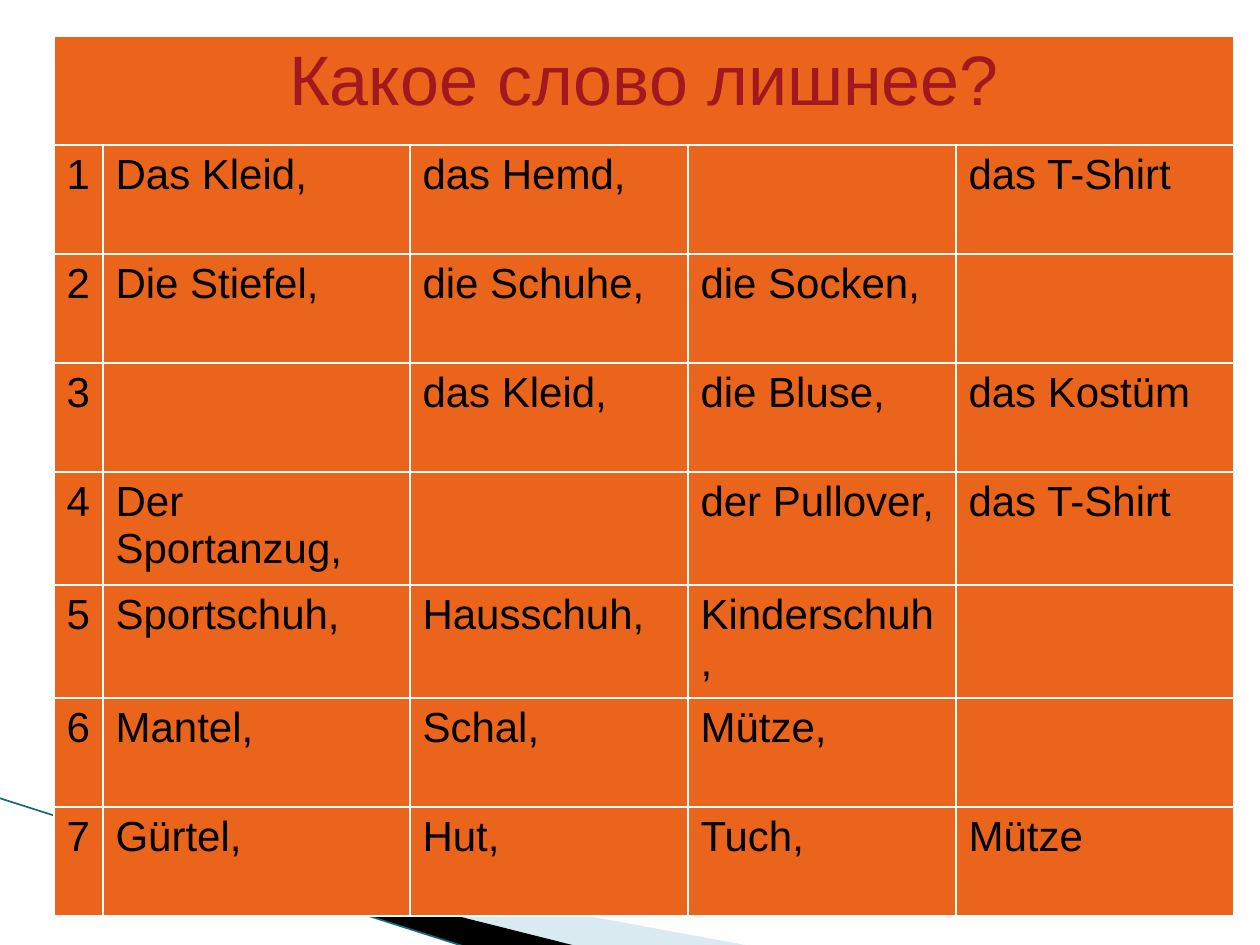
from pptx import Presentation
from pptx.dml.color import RGBColor as RGB
from pptx.enum.text import PP_ALIGN as Align
from pptx.oxml.ns import qn
from pptx.util import Pt
from lxml.etree import SubElement as Sub

SCALE = 914400 / 126
BLACK = RGB(0, 0, 0)
ORANGE = RGB(0xEB, 0x64, 0x1B)
RED = RGB(0xA3, 0x17, 0x1E)
PALE = RGB(0xA0, 0xCB, 0xDC)
TEAL = RGB(0x16, 0x69, 0x7A)

TITLE = "Какое слово лишнее?"
WORDS = [
    ("Das Kleid,", "das Hemd,", "", "das T-Shirt"),
    ("Die Stiefel,", "die Schuhe,", "die Socken,", ""),
    ("", "das Kleid,", "die Bluse,", "das Kostüm"),
    ("Der Sportanzug,", "", "der Pullover,", "das T-Shirt"),
    ("Sportschuh,", "Hausschuh,", "Kinderschuh,", ""),
    ("Mantel,", "Schal,", "Mütze,", ""),
    ("Gürtel,", "Hut,", "Tuch,", "Mütze"),
]
COLS = (49, 307, 278, 268, 278)
ROWS = (109, 109, 109, 109, 113, 113, 109, 109)


def px(n):
    return round(n * SCALE)


def set_frame(shape, points, left, top, width, height):
    """Give a freeform a frame that its outline may reach beyond."""
    shape.left, shape.top = px(left), px(top)
    shape.width, shape.height = px(width), px(height)
    outline = next(shape._element.iter(qn("a:path")))
    outline.set("w", str(width))
    outline.set("h", str(height))
    for node, (x, y) in zip(outline.iter(qn("a:pt")), points):
        node.set("x", str(x - left))
        node.set("y", str(y - top))


def add_wedge(slide, points, frame, color, alpha=100):
    start, *rest = points
    pen = slide.shapes.build_freeform(*start, scale=SCALE)
    pen.add_line_segments(rest, close=False)
    wedge = pen.convert_to_shape()
    set_frame(wedge, points, *frame)
    wedge.shadow.inherit = False
    wedge.line.fill.background()
    wedge.fill.solid()
    wedge.fill.fore_color.rgb = color
    if alpha < 100:
        tint = wedge._element.spPr.find(qn("a:solidFill"))[0]
        Sub(tint, qn("a:alpha"), val=str(alpha * 1000))


def add_line(slide, x1, y1, x2, y2, color, width):
    line = slide.shapes.add_connector(1, px(x1), px(y1), px(x2), px(y2))
    line.line.color.rgb = color
    line.line.width = Pt(width)
    Sub(line._element.spPr, qn("a:effectLst"))


def fill_cell(cell, text, size=24, color=BLACK, align=Align.LEFT):
    cell.fill.solid()
    cell.fill.fore_color.rgb = ORANGE
    cell.text = text
    para = cell.text_frame.paragraphs[0]
    para.alignment = align
    font = para.font
    font.name = "Arial"
    font.size = Pt(size)
    font.bold = False
    font.color.rgb = color


def add_words(slide, left, top):
    # The default table style draws the white rules
    table = slide.shapes.add_table(
        len(ROWS), len(COLS), px(left), px(top),
        px(sum(COLS)), px(sum(ROWS))).table
    table.horz_banding = False
    for col, width in zip(table.columns, COLS):
        col.width = px(width)
    for row, height in zip(table.rows, ROWS):
        row.height = px(height)

    # Title row
    head = table.cell(0, 0)
    head.merge(table.cell(0, len(COLS) - 1))
    fill_cell(head, TITLE, 40, RED, Align.CENTER)

    # Numbered word rows
    for r, words in enumerate(WORDS, 1):
        for c, text in enumerate((str(r), *words)):
            fill_cell(table.cell(r, c), text)


def main():
    deck = Presentation()
    deck.slide_width, deck.slide_height = px(1260), px(945)
    slide = deck.slides.add_slide(deck.slide_layouts[6])

    # Corner decoration
    add_wedge(slide, [(69, 820), (750, 946), (575, 946), (69, 819)],
              (98, 689, 524, 199), PALE, 40)
    add_wedge(slide, [(67, 818), (576, 946), (469, 948), (68, 819)],
              (-8, 798, 524, 116), BLACK)
    add_line(slide, -1, 798, 469, 948, TEAL, 0.95)

    # Word table
    add_words(slide, 54, 36)
    deck.save("out.pptx")


if __name__ == "__main__":
    main()
